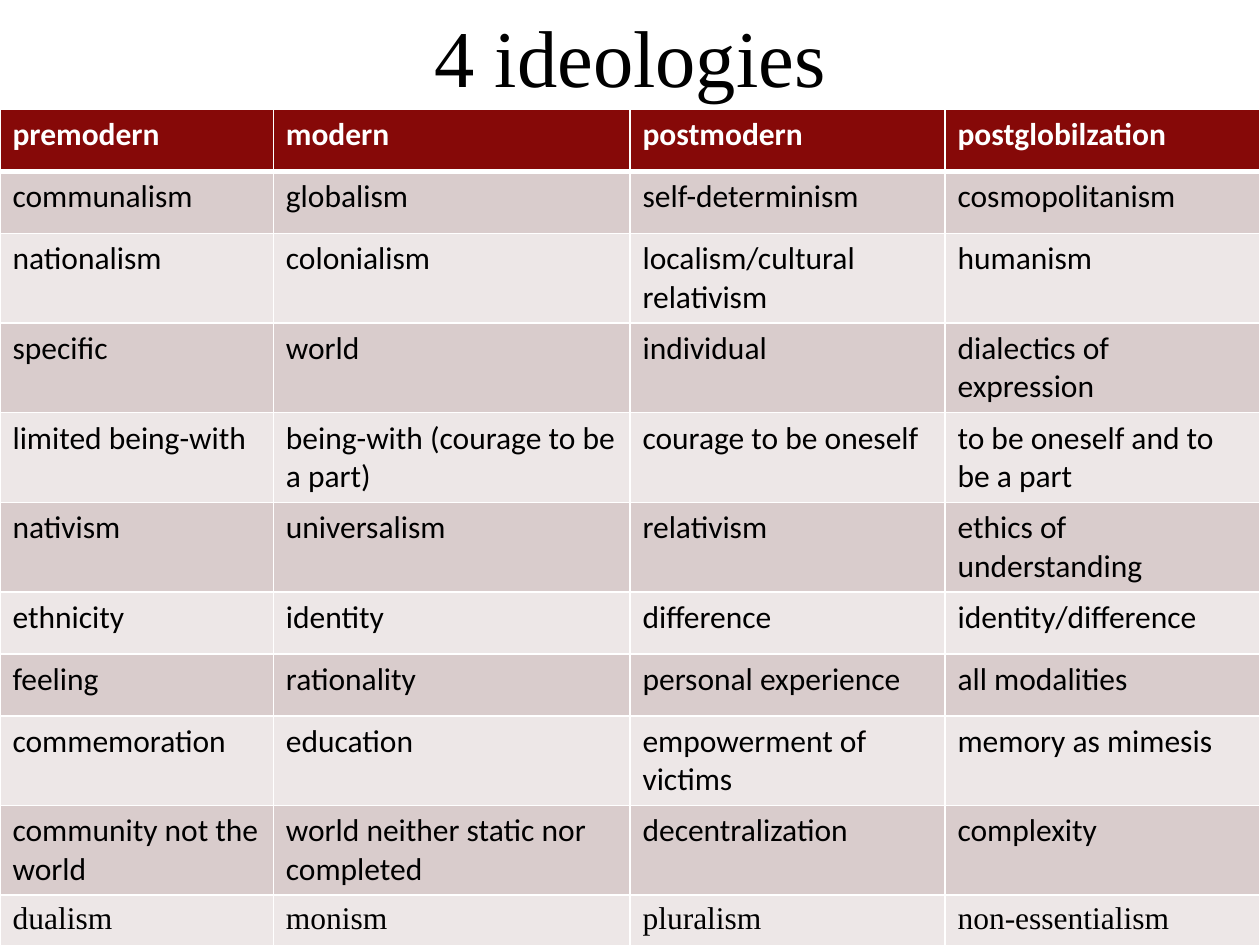
from lxml.etree import SubElement
from pptx import Presentation
from pptx.dml.color import RGBColor
from pptx.enum.text import MSO_ANCHOR, PP_ALIGN
from pptx.oxml.ns import qn
from pptx.util import Cm, Pt

HUES = {"ink": "000000", "paper": "FFFFFF", "head": "860908",
        "dark": "D9CCCC", "light": "EDE7E7"}
SANS, SERIF = "Calibri", "Times New Roman"

ROWS = [
    ("premodern", "modern", "postmodern", "postglobilzation"),
    ("communalism", "globalism", "self-determinism", "cosmopolitanism"),
    ("nationalism", "colonialism", "localism/cultural relativism", "humanism"),
    ("specific", "world", "individual", "dialectics of expression"),
    ("limited being-with", "being-with (courage to be a part)",
     "courage to be oneself", "to be oneself and to be a part"),
    ("nativism", "universalism", "relativism", "ethics of understanding"),
    ("ethnicity", "identity", "difference", "identity/difference"),
    ("feeling", "rationality", "personal experience", "all modalities"),
    ("commemoration", "education", "empowerment of victims", "memory as mimesis"),
    ("community not the world", "world neither static nor completed",
     "decentralization", "complexity"),
    ("dualism", "monism", "pluralism", "non-essentialism"),
]
WIDTHS = [5.51, 7.19, 6.35, 6.35]
ONE, TWO, LAST = 1.25, 1.8, 1.04
HEIGHTS = [ONE, ONE, TWO, TWO, TWO, TWO, ONE, ONE, TWO, TWO, LAST]


def write(frame, text, size=18, font=SANS, hue="ink", bold=False,
          align=PP_ALIGN.LEFT):
    para = frame.paragraphs[0]
    para.alignment = align
    run = para.add_run()
    run.text = text
    run.font.size = Pt(size)
    run.font.name = font
    run.font.bold = bold
    run.font.color.rgb = RGBColor.from_string(HUES[hue])


class Deck:
    def __init__(self):
        self.show = Presentation()
        self.show.slide_width, self.show.slide_height = Cm(25.4), Cm(19.05)
        self.slide = self.show.slides.add_slide(self.show.slide_layouts[5])

    def title(self, text, left, top, width, height):
        box = self.slide.shapes.title
        box.left, box.top, box.width, box.height = map(Cm, (left, top, width, height))
        box.text_frame.vertical_anchor = MSO_ANCHOR.MIDDLE
        write(box.text_frame, text, size=46, font=SERIF, align=PP_ALIGN.CENTER)

    def border(self, cell, base):
        props = cell._tc.get_or_add_tcPr()
        for side, wide in (("L", 1), ("R", 1), ("T", 1), ("B", base)):
            line = SubElement(props, qn(f"a:ln{side}"), w=str(Pt(wide)))
            fill = SubElement(line, qn("a:solidFill"))
            SubElement(fill, qn("a:srgbClr"), val=HUES["paper"])

    def cell(self, cell, text, fill, base=1, **style):
        self.border(cell, base)
        cell.fill.solid()
        cell.fill.fore_color.rgb = RGBColor.from_string(HUES[fill])
        write(cell.text_frame, text, **style)

    def table(self, rows, widths, heights, left, top):
        grid = self.slide.shapes.add_table(
            len(rows), len(widths), Cm(left), Cm(top),
            Cm(sum(widths)), Cm(sum(heights))).table
        for col, width in zip(grid.columns, widths):
            col.width = Cm(width)
        for r, (words, height) in enumerate(zip(rows, heights)):
            grid.rows[r].height = Cm(height)
            if r == 0:
                look = dict(fill="head", base=3, hue="paper", bold=True)
            else:
                look = dict(fill="dark" if r % 2 else "light",
                            font=SERIF if r == len(rows) - 1 else SANS)
            for c, text in enumerate(words):
                self.cell(grid.cell(r, c), text, **look)


def main():
    deck = Deck()
    deck.title("4 ideologies", 1.27, 0, 22.86, 2.21)
    deck.table(ROWS, WIDTHS, HEIGHTS, 0, 2.21)
    deck.show.save("out.pptx")


if __name__ == "__main__":
    main()
